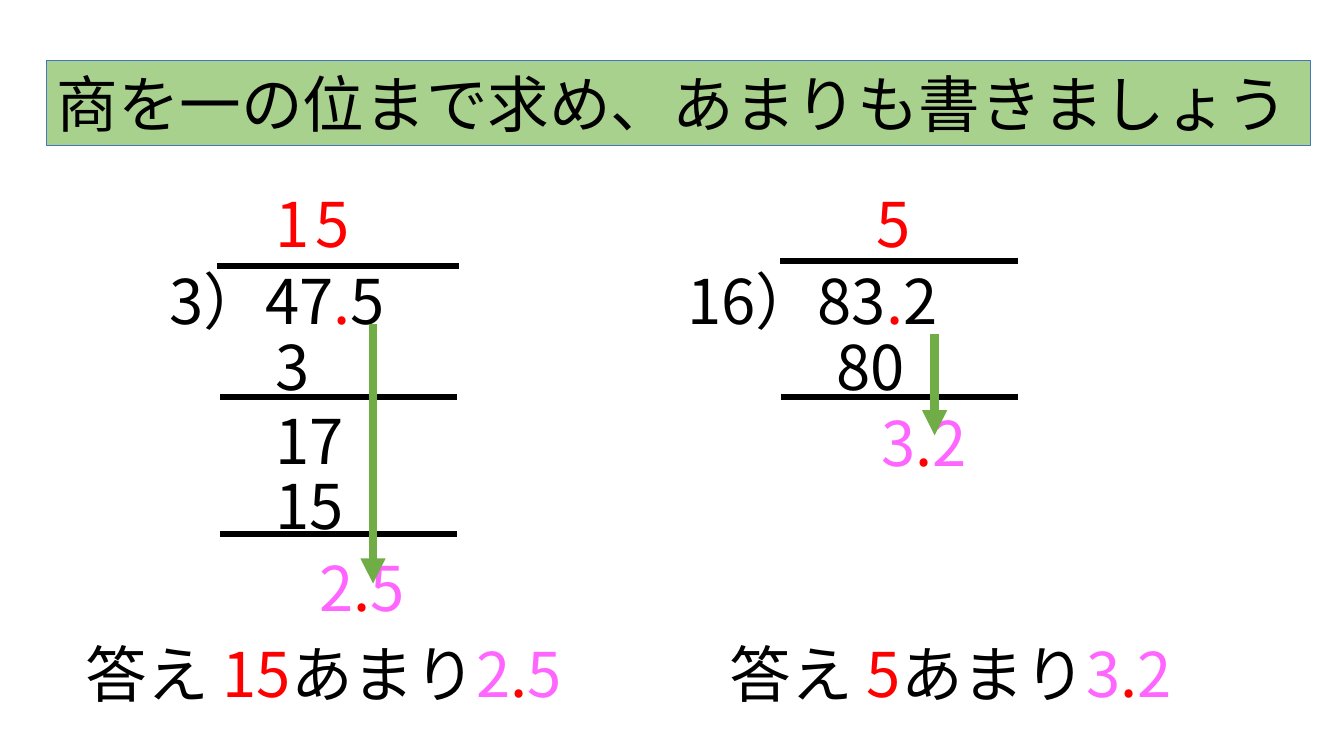
from dataclasses import dataclass

from lxml.etree import SubElement
from pptx import Presentation
from pptx.dml.color import RGBColor
from pptx.enum.shapes import MSO_CONNECTOR
from pptx.enum.text import MSO_ANCHOR, MSO_AUTO_SIZE, PP_ALIGN
from pptx.oxml.ns import qn
from pptx.util import Inches, Pt

FONT = "Noto Sans CJK JP"
HIGH = 0.84
COLORS = {
    "ink": "000000",
    "red": "FF0000",
    "pink": "FF66FF",
    "band": "A9D18E",
    "edge": "4472C4",
    "arrow": "70AD47",
}


@dataclass
class Run:
    text: str
    color: str = "ink"


@dataclass
class Label:
    left: float
    top: float
    width: float
    runs: list[Run]
    wrap: bool = False


@dataclass
class Line:
    left: float
    top: float
    right: float
    bottom: float
    color: str = "ink"
    weight: float = 4.5
    head: bool = False


def rgb(name: str) -> RGBColor:
    return RGBColor.from_string(COLORS[name])


def decimal(whole: str, tenth: str, color: str) -> list[Run]:
    """A number whose decimal point is red."""
    return [Run(whole, color), Run(".", "red"), Run(tenth, color)]


def answer(share: str, rest: list[Run]) -> list[Run]:
    return [Run("答え "), Run(share, "red"), Run("あまり"), *rest]


def bar(left: float, right: float, top: float) -> Line:
    return Line(left, top, right, top)


def arrow(left: float, top: float, bottom: float) -> Line:
    return Line(left, top, left, bottom, "arrow", 6, True)


def write(frame, runs: list[Run], wrap: bool = False) -> None:
    frame.word_wrap = wrap
    frame.auto_size = MSO_AUTO_SIZE.SHAPE_TO_FIT_TEXT
    frame.vertical_anchor = MSO_ANCHOR.TOP
    para = frame.paragraphs[0]
    para.alignment = PP_ALIGN.LEFT
    para.line_spacing = 1.0
    para.space_before = Pt(0)
    for part in runs:
        run = para.add_run()
        run.text = part.text
        run.font.size = Pt(44)
        run.font.name = FONT
        run.font.color.rgb = rgb(part.color)
        SubElement(run.font._element, qn("a:ea"), typeface=FONT)


def draw_label(slide, label: Label) -> None:
    box = slide.shapes.add_textbox(
        Inches(label.left), Inches(label.top), Inches(label.width), Inches(HIGH))
    write(box.text_frame, label.runs, label.wrap)


def draw_line(slide, line: Line) -> None:
    link = slide.shapes.add_connector(
        MSO_CONNECTOR.STRAIGHT, Inches(line.left), Inches(line.top),
        Inches(line.right), Inches(line.bottom))
    link.line.color.rgb = rgb(line.color)
    link.line.width = Pt(line.weight)
    if line.head:
        SubElement(link.line._get_or_add_ln(), qn("a:tailEnd"), type="triangle")
    SubElement(link._element.spPr, qn("a:effectLst"))


def draw_title(slide, text: str) -> None:
    title = slide.shapes.title
    title.left, title.top = Inches(0.46), Inches(0.6)
    title.width, title.height = Inches(12.54), Inches(HIGH)
    title.fill.solid()
    title.fill.fore_color.rgb = rgb("band")
    title.line.color.rgb = rgb("edge")
    title.line.width = Pt(0.75)
    write(title.text_frame, [Run(text)])


# Rules of the two long divisions
BARS = [
    bar(2.15, 4.55, 2.64),
    bar(2.18, 4.53, 3.94),
    bar(2.18, 4.53, 5.3),
    bar(7.74, 10.1, 2.59),
    bar(7.75, 10.1, 3.94),
]

# Remainders, shown in the work and again in the answer
REST_A = decimal("2", "5", "pink")
REST_B = decimal("3", "2", "pink")

LABELS = [
    # 47.5 ÷ 3
    Label(1.58, 2.56, 2.79, decimal("3）47", "5", "ink")),
    Label(2.63, 1.8, 0.64, [Run("1", "red")]),
    Label(3.03, 1.8, 0.64, [Run("5", "red")]),
    Label(2.63, 3.21, 0.64, [Run("3")]),
    Label(2.63, 3.95, 1.07, [Run("17")], True),
    Label(2.63, 4.59, 1.07, [Run("15")]),
    Label(3.07, 5.41, 1.3, REST_A, True),
    Label(0.75, 6.26, 5.44, answer("15", REST_A)),
    # 83.2 ÷ 16
    Label(6.72, 2.56, 3.23, decimal("16）83", "2", "ink")),
    Label(8.6, 1.8, 0.64, [Run("5", "red")]),
    Label(8.2, 3.21, 1.07, [Run("80")]),
    Label(8.64, 3.97, 1.3, REST_B, True),
    Label(7.14, 6.26, 5.19, answer("5", REST_B)),
]

# Arrows bringing the decimal point down
ARROWS = [arrow(3.7, 3.21, 5.79), arrow(9.27, 3.31, 4.32)]


def main() -> None:
    deck = Presentation()
    deck.slide_width, deck.slide_height = Inches(13.33), Inches(7.5)
    slide = deck.slides.add_slide(deck.slide_layouts[5])
    draw_title(slide, "商を一の位まで求め、あまりも書きましょう")
    for line in BARS:
        draw_line(slide, line)
    for label in LABELS:
        draw_label(slide, label)
    for line in ARROWS:
        draw_line(slide, line)
    deck.save("out.pptx")


if __name__ == "__main__":
    main()
